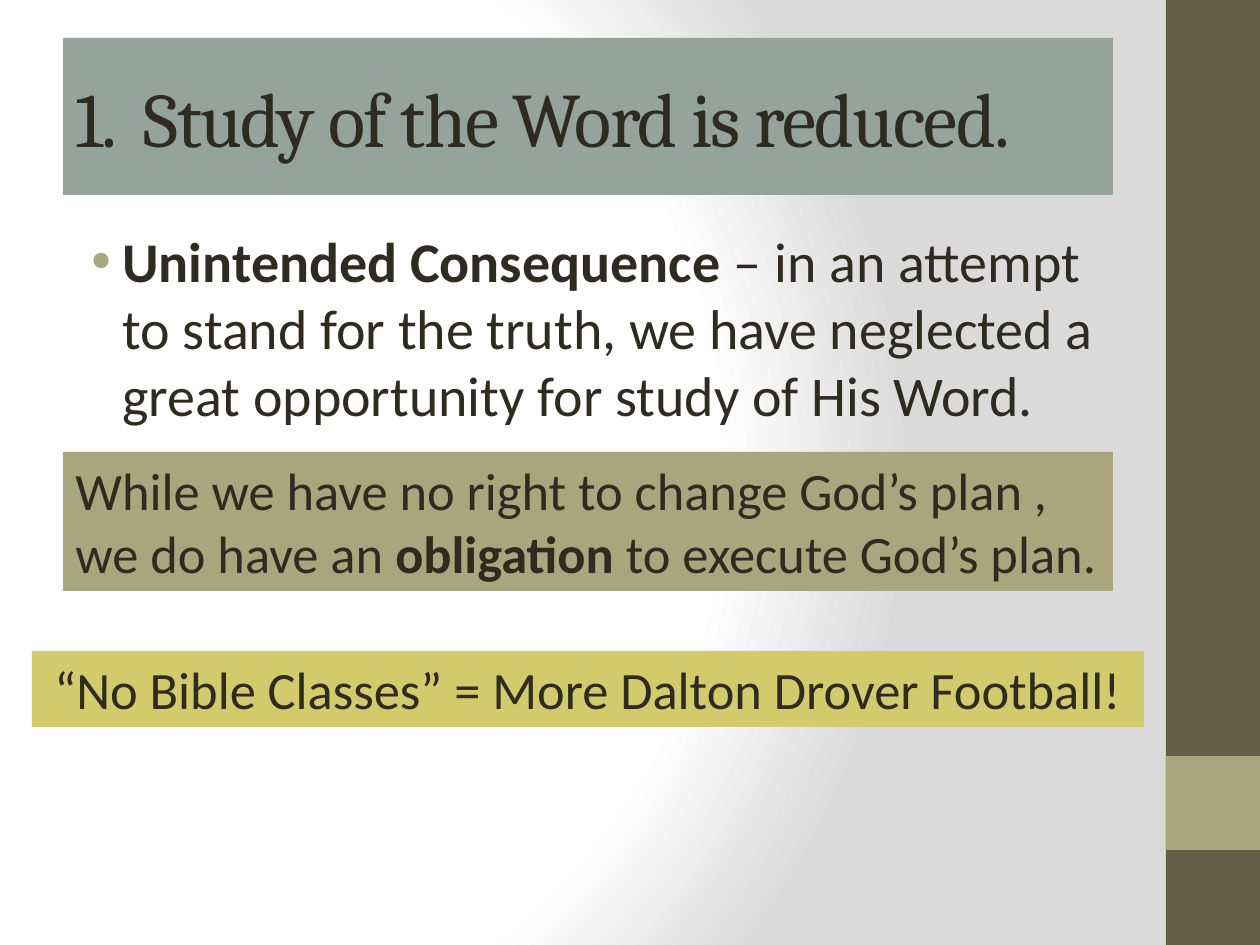
from lxml import etree
from pptx import Presentation
from pptx.dml.color import RGBColor
from pptx.enum.shapes import MSO_SHAPE
from pptx.enum.text import MSO_ANCHOR, PP_ALIGN
from pptx.oxml import parse_xml
from pptx.oxml.ns import nsdecls, qn
from pptx.util import Pt

RECTANGLE = MSO_SHAPE.RECTANGLE
TOP, MIDDLE = MSO_ANCHOR.TOP, MSO_ANCHOR.MIDDLE
LEFT, CENTER = PP_ALIGN.LEFT, PP_ALIGN.CENTER

WHITE = RGBColor(0xFF, 0xFF, 0xFF)
GRAY = RGBColor(0xDA, 0xDA, 0xDA)
BROWN = RGBColor(0x67, 0x5E, 0x47)
OLIVE = RGBColor(0xA9, 0xA5, 0x7C)
SAGE = RGBColor(0x95, 0xA3, 0x9D)
YELLOW = RGBColor(0xD2, 0xCB, 0x6C)
INK = RGBColor(0x2F, 0x2B, 0x20)

PX_PER_INCH = 126


def px(value):
    return round(value * 914400 / PX_PER_INCH)


def paint_background(page):
    page.background.fill.gradient()
    gradient = page.element.find(".//" + qn("a:gradFill"))
    stops = "".join(
        f'<a:gs pos="{position}000"><a:srgbClr val="{color}"/></a:gs>'
        for position, color in ((0, WHITE), (75, WHITE), (100, GRAY))
    )
    radial = parse_xml(
        f'<a:gradFill {nsdecls("a")} rotWithShape="1"><a:gsLst>{stops}</a:gsLst>'
        '<a:path path="circle">'
        '<a:fillToRect l="20000" t="50000" r="100000" b="50000"/>'
        "</a:path></a:gradFill>"
    )
    gradient.getparent().replace(gradient, radial)


def add_panel(page, bounds, color):
    panel = page.shapes.add_shape(RECTANGLE, *map(px, bounds))
    panel.shadow.inherit = False
    panel.fill.solid()
    panel.fill.fore_color.rgb = color
    panel.line.fill.background()
    return panel


def write_text(box, spans, size, font="Calibri", align=LEFT, anchor=TOP):
    frame = box.text_frame
    frame.word_wrap = True
    frame.vertical_anchor = anchor
    para = frame.paragraphs[0]
    para.alignment = align
    for text, bold in spans:
        span = para.add_run()
        span.text = text
        span.font.name = font
        span.font.size = Pt(size)
        span.font.bold = bold
        span.font.color.rgb = INK
    return para


def add_bullet(para, color):
    properties = para._p.get_or_add_pPr()
    properties.set("marL", str(px(47)))
    properties.set("indent", str(-px(31)))
    bullet_color = etree.SubElement(properties, qn("a:buClr"))
    etree.SubElement(bullet_color, qn("a:srgbClr"), val=str(color))
    etree.SubElement(properties, qn("a:buFont"), typeface="Arial")
    etree.SubElement(properties, qn("a:buChar"), char="•")


def tighten(para, points):
    for span in para.runs:
        span.font._element.set("spc", str(points * 100))


def main():
    deck = Presentation()
    deck.slide_width, deck.slide_height = px(1260), px(945)
    page = deck.slides.add_slide(deck.slide_layouts[6])
    paint_background(page)

    add_panel(page, (1166, 0, 94, 945), BROWN)
    add_panel(page, (1166, 756, 94, 94), OLIVE)

    title = add_panel(page, (63, 38, 1050, 157), SAGE)
    heading = write_text(title, [("1.  Study of the Word is reduced.", False)],
                         44, font="Cambria", anchor=MIDDLE)
    tighten(heading, -1)

    body = page.shapes.add_textbox(*map(px, (63, 220, 1050, 252)))
    point = write_text(body, [
        ("Unintended Consequence ", True),
        ("– in an attempt to stand for the truth, we have neglected a "
         "great opportunity for study of His Word.", False),
    ], 32)
    add_bullet(point, OLIVE)

    obligation = add_panel(page, (63, 452, 1050, 139), OLIVE)
    write_text(obligation, [
        ("While we have no right to change God’s plan , we do have an ", False),
        ("obligation", True),
        (" to execute God’s plan.", False),
    ], 30)

    remark = add_panel(page, (32, 651, 1112, 76), YELLOW)
    write_text(remark, [("“No Bible Classes” = More Dalton Drover Football!", False)],
               30, align=CENTER)

    deck.save("out.pptx")


if __name__ == "__main__":
    main()
